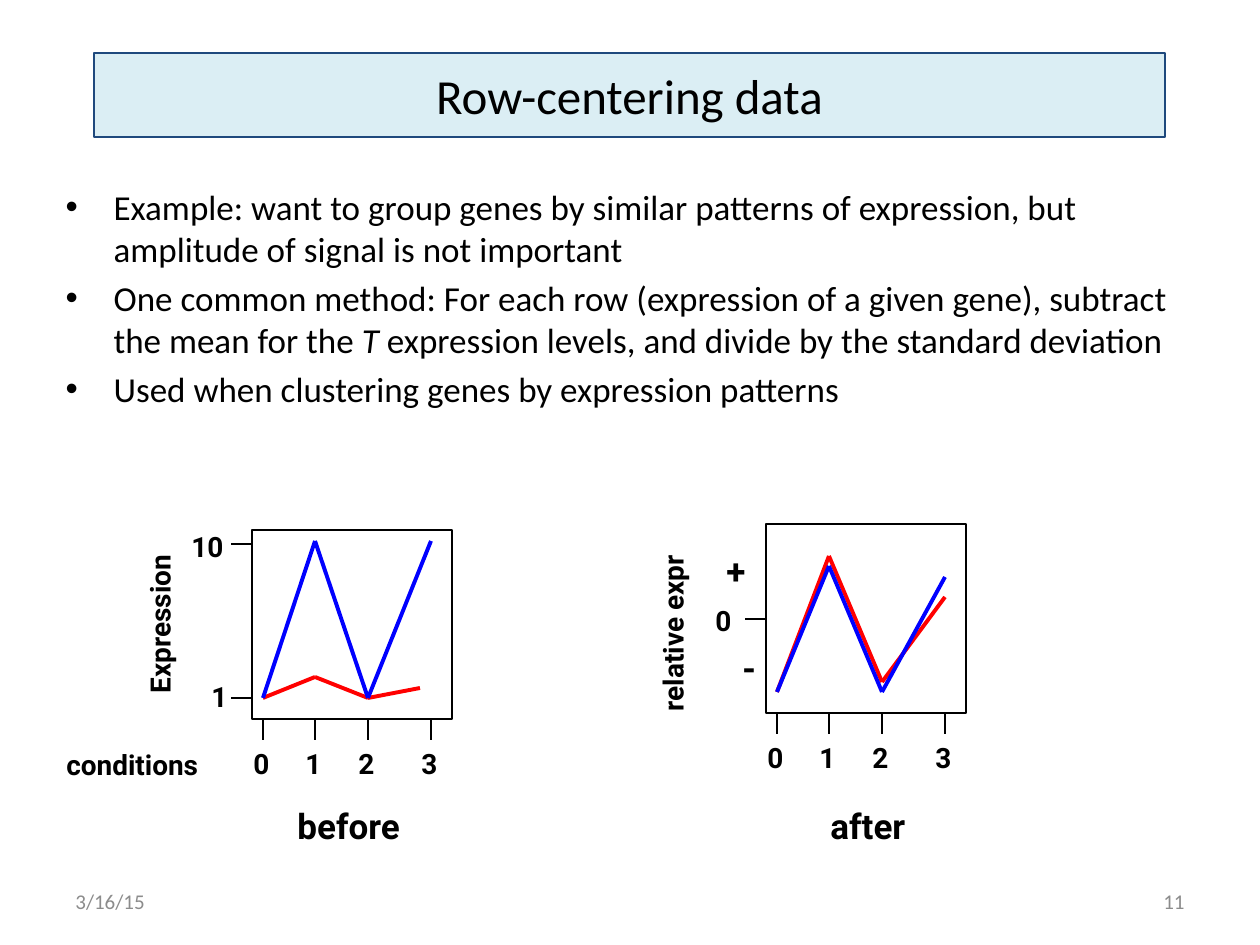
from lxml import etree
from pptx import Presentation
from pptx.dml.color import RGBColor
from pptx.enum.shapes import MSO_CONNECTOR, MSO_SHAPE
from pptx.enum.text import MSO_ANCHOR, MSO_AUTO_SIZE, PP_ALIGN
from pptx.oxml.ns import qn
from pptx.util import Pt

LEFT, CENTER, RIGHT = PP_ALIGN.LEFT, PP_ALIGN.CENTER, PP_ALIGN.RIGHT
TOP, MIDDLE = MSO_ANCHOR.TOP, MSO_ANCHOR.MIDDLE
NO_AUTOFIT = MSO_AUTO_SIZE.NONE
RECTANGLE, STRAIGHT = MSO_SHAPE.RECTANGLE, MSO_CONNECTOR.STRAIGHT

BLACK = RGBColor(0x00, 0x00, 0x00)
WHITE = RGBColor(0xFF, 0xFF, 0xFF)
RED = RGBColor(0xFF, 0x00, 0x00)
BLUE = RGBColor(0x00, 0x00, 0xFF)
GRAY = RGBColor(0x8C, 0x8C, 0x8C)
NAVY = RGBColor(0x1F, 0x49, 0x7D)
PALE_BLUE = RGBColor(0xDB, 0xEE, 0xF4)

# Content: each bullet is a list of (text, italic) runs
TITLE = "Row-centering data"
BULLETS = [
    [("Example: want to group genes by similar patterns of expression, "
      "but amplitude of signal is not important", False)],
    [("One common method: For each row (expression of a given gene), "
      "subtract the mean for the ", False), ("T", True),
     (" expression levels, and divide by the standard deviation", False)],
    [("Used when clustering genes by expression patterns", False)],
]
FOOTERS = [("3/16/15", 63, LEFT), ("11", 903, RIGHT)]

# Plots: points and ticks are px from the frame's corner, label boxes are slide px
PLOT_WIDTH, PLOT_HEIGHT, TICK = 200, 189, 21
CONDITIONS = {"0": 11, "1": 63, "2": 116, "3": 179}
PLOTS = [
    {
        "corner": (766, 524),
        "series": [(RED, [(11, 168), (63, 32), (116, 158), (179, 73)]),
                   (BLUE, [(11, 168), (63, 42), (116, 168), (179, 53)])],
        "y_ticks": [95],
        "axis_title": ("relative expr", (578, 605, 190, 47)),
        "labels": [("0", (703, 597, 32, 47), 16), ("+", (714, 543, 45, 54), 20),
                   ("-", (730, 640, 37, 54), 20), ("after", (818, 798, 101, 54), 20)],
    },
    {
        "corner": (252, 530),
        "series": [(RED, [(11, 168), (63, 147), (116, 168), (168, 158)]),
                   (BLUE, [(11, 168), (63, 11), (116, 168), (179, 11)])],
        "y_ticks": [14, 168],
        "axis_title": ("Expression", (71, 593, 178, 47)),
        "labels": [("10", (179, 523, 57, 47), 16), ("1", (199, 673, 25, 47), 16),
                   ("before", (285, 798, 132, 54), 20),
                   ("conditions", (54, 741, 166, 47), 16)],
    },
]


def px(value):
    return round(value * 914400 / 126)


def place(shape, box):
    shape.left, shape.top, shape.width, shape.height = map(px, box)


def format_font(font, size, name="Calibri", color=BLACK, bold=False, italic=False):
    font.size, font.name, font.bold, font.italic = Pt(size), name, bold, italic
    font.color.rgb = color


def add_text(shapes, text, box, align=LEFT, anchor=TOP, wrap=True, rotation=0, **font):
    shape = shapes.add_textbox(*map(px, box))
    shape.rotation = rotation
    frame = shape.text_frame
    frame.word_wrap, frame.vertical_anchor = wrap, anchor
    paragraph = frame.paragraphs[0]
    paragraph.alignment = align
    run = paragraph.add_run()
    run.text = text
    format_font(run.font, **font)


def add_line(shapes, start, end, color=BLACK, width=1):
    line = shapes.add_connector(STRAIGHT, *map(px, (*start, *end)))
    line.line.color.rgb, line.line.width = color, Pt(width)
    etree.SubElement(line._element.spPr, qn("a:effectLst"))


def add_plot(slide, plot):
    shapes = slide.shapes.add_group_shape().shapes
    left, top = plot["corner"]
    bottom = top + PLOT_HEIGHT
    frame = shapes.add_shape(RECTANGLE, *map(px, (left, top, PLOT_WIDTH, PLOT_HEIGHT)))
    frame.shadow.inherit = False
    frame.fill.solid()
    frame.fill.fore_color.rgb = WHITE
    frame.line.color.rgb, frame.line.width = BLACK, Pt(1)

    # Axes
    for label, offset in CONDITIONS.items():
        x = left + offset
        add_line(shapes, (x, bottom), (x, bottom + TICK))
        add_text(shapes, label, (x - 22, bottom + TICK, 25, 47),
                 size=16, name="Roboto", bold=True)
    for offset in plot["y_ticks"]:
        add_line(shapes, (left, top + offset), (left - TICK, top + offset))

    # Expression profiles
    for color, offsets in plot["series"]:
        points = [(left + x, top + y) for x, y in offsets]
        for start, end in zip(points, points[1:]):
            add_line(shapes, start, end, color, 2.25)

    # Labels
    text, box = plot["axis_title"]
    add_text(shapes, text, box, wrap=False, rotation=270,
             size=16, name="Roboto", bold=True)
    for text, box, size in plot["labels"]:
        add_text(shapes, text, box, wrap=len(text) < 3,
                 size=size, name="Roboto", bold=True)


def main():
    presentation = Presentation()
    presentation.slide_width, presentation.slide_height = px(1260), px(945)
    slide = presentation.slides.add_slide(presentation.slide_layouts[1])

    # Title
    title = slide.shapes.title
    place(title, (94, 53, 1071, 84))
    title.fill.solid()
    title.fill.fore_color.rgb = PALE_BLUE
    title.line.color.rgb, title.line.width = NAVY, Pt(1)
    title.text_frame.text = TITLE
    title.text_frame.auto_size = NO_AUTOFIT
    title.text_frame.vertical_anchor = MIDDLE
    title.text_frame.paragraphs[0].alignment = CENTER
    format_font(title.text_frame.paragraphs[0].runs[0].font, 28)

    # Bullets
    body = slide.placeholders[1]
    place(body, (53, 179, 1155, 294))
    frame = body.text_frame
    frame.auto_size = NO_AUTOFIT
    for index, runs in enumerate(BULLETS):
        paragraph = frame.add_paragraph() if index else frame.paragraphs[0]
        properties = paragraph._p.get_or_add_pPr()
        properties.set("marL", str(px(48)))
        properties.set("indent", str(px(-48)))
        for text, italic in runs:
            run = paragraph.add_run()
            run.text = text
            format_font(run.font, 20, italic=italic)

    for plot in PLOTS:
        add_plot(slide, plot)

    # Date and slide number
    for text, left, align in FOOTERS:
        add_text(slide.shapes, text, (left, 876, 294, 50), align=align,
                 anchor=MIDDLE, size=12, color=GRAY)

    presentation.save("out.pptx")


if __name__ == "__main__":
    main()
